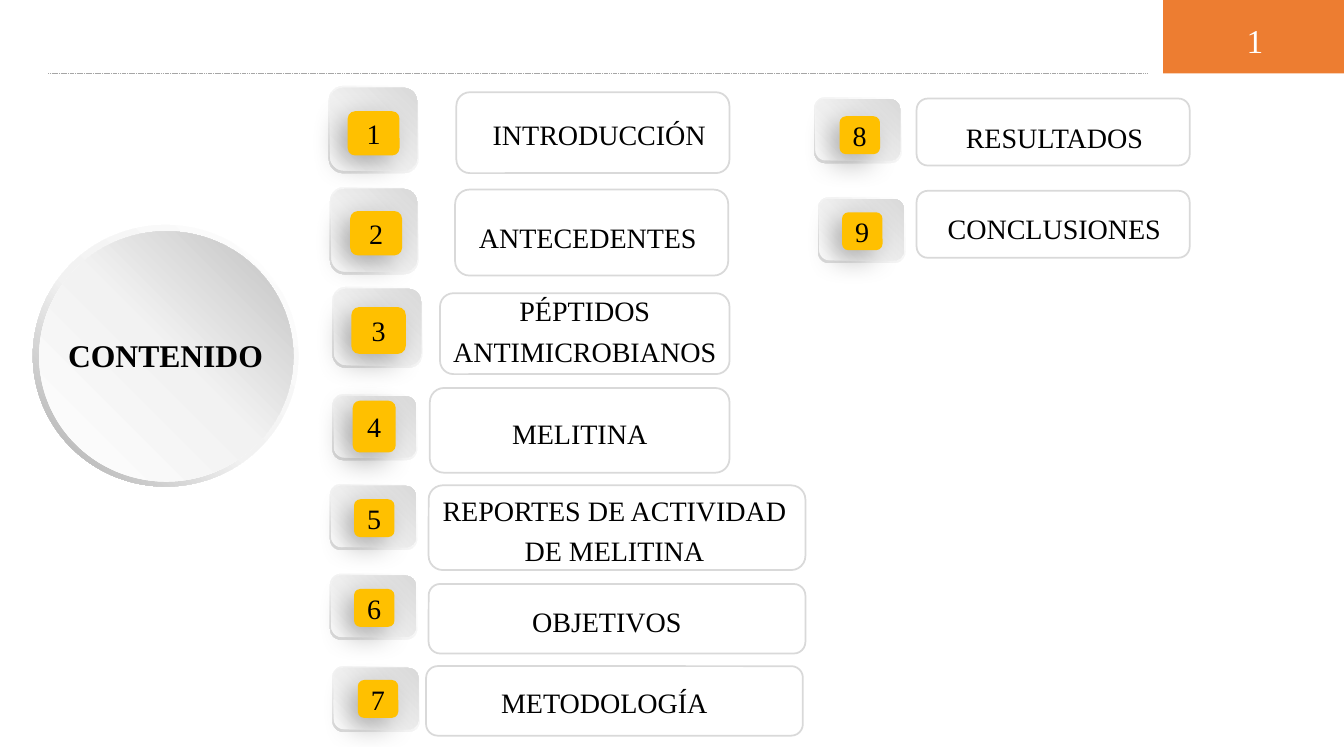
import lxml.etree
import pptx
import pptx.dml.color
import pptx.enum.dml
import pptx.enum.shapes
import pptx.enum.text
import pptx.oxml.ns
import pptx.util

COLUMNS, ROWS = 106.3, 59.1
CELL = pptx.util.Inches(0.1)
FONT = "Times New Roman"
COLORS = {
    "white": "FFFFFF", "black": "000000", "orange": "ED7D31", "amber": "FFC000",
    "border": "D9D9D9", "rule": "A6A6A6", "light": "F2F2F2", "pale": "F0F0F0",
    "silver": "BFBFBF",
}
TILE_BACK = ([(0, "white"), (62, "light"), (100, "border")], 135)
TILE_FRONT = ([(0, "white"), (42, "pale"), (100, "border")], 315)
RING = ([(0, "white"), (55, "light"), (100, "rule")], 135)
DISC = ([(0, "white"), (51, "light"), (100, "silver")], 315)
SHAPES = pptx.enum.shapes.MSO_SHAPE

# number, label lines, frame, label box, tile, chip: left, top, columns, rows
CONTENTS = [
    ("1", ["INTRODUCCIÓN"], (36.1, 7.3, 21.6, 6.4), (25.5, 8.3, 43.8, 4),
     (26, 6.8, 7.1, 6.9), (27.5, 8.8, 4.1, 3.5)),
    ("2", ["ANTECEDENTES"], (36, 15, 21.6, 6.8), (31.6, 16.4, 29.8, 4),
     (26.1, 14.8, 7, 6.9), (27.7, 16.7, 4.1, 3.5)),
    ("3", ["PÉPTIDOS", "ANTIMICROBIANOS"], (34.8, 23.2, 22.9, 6.4), (34.7, 22.2, 23.1, 7.2),
     (26.3, 22.7, 7.1, 6.4), (27.8, 24.3, 4.3, 3.7)),
    ("4", ["MELITINA"], (34, 30.7, 23.7, 6.7), (39.4, 31.9, 12.9, 4),
     (26.3, 31.2, 6.7, 5.2), (27.9, 31.7, 3.4, 4.1)),
    ("5", ["REPORTES DE ACTIVIDAD", "DE MELITINA"], (33.9, 38.4, 29.8, 6.7), (23.2, 38, 50.8, 7.2),
     (26.1, 38.3, 6.9, 5.2), (28, 39.5, 3.2, 3)),
    ("6", ["OBJETIVOS"], (33.9, 46.2, 29.8, 5.5), (33.1, 46.8, 29.8, 4),
     (26.1, 45.4, 6.9, 5.2), (28, 46.6, 3.2, 3)),
    ("7", ["METODOLOGÍA"], (33.7, 52.7, 29.8, 5.5), (32.9, 53.2, 29.8, 4),
     (26.3, 52.7, 6.9, 5.2), (28.3, 53.8, 3.2, 3)),
    ("8", ["RESULTADOS"], (72.5, 7.8, 21.6, 5.3), (68.5, 8.5, 29.8, 4),
     (64.4, 7.7, 6.9, 5.2), (66.4, 9.2, 3.2, 3)),
    ("9", ["CONCLUSIONES"], (72.5, 15.1, 21.6, 5.3), (73.6, 15.7, 19.6, 4),
     (64.7, 15.6, 6.9, 5.2), (66.6, 16.8, 3.2, 3)),
]


def cells(*counts):
    return [int(count * CELL) for count in counts]


def rgb(name):
    return pptx.dml.color.RGBColor.from_string(COLORS[name])


def add_element(parent, tag, **attributes):
    element = lxml.etree.SubElement(parent, pptx.oxml.ns.qn(tag))
    for name, value in attributes.items():
        element.set(name, str(value))
    return element


def write_text(frame, lines, size=16, color="black", bold=False, spacing=1.0):
    for index, line in enumerate(lines):
        paragraph = frame.paragraphs[0] if index == 0 else frame.add_paragraph()
        paragraph.text = line
        paragraph.alignment = pptx.enum.text.PP_ALIGN.CENTER
        paragraph.line_spacing = spacing
        paragraph.font.name = FONT
        paragraph.font.size = pptx.util.Pt(size)
        paragraph.font.bold = bold
        paragraph.font.color.rgb = rgb(color)


def add_text_box(shapes, bounds, lines, wrap=True, **text_format):
    frame = shapes.add_textbox(*cells(*bounds)).text_frame
    frame.word_wrap = wrap
    frame.auto_size = pptx.enum.text.MSO_AUTO_SIZE.SHAPE_TO_FIT_TEXT
    write_text(frame, lines, **text_format)


def add_solid(shapes, kind, bounds, fill, border=None):
    shape = shapes.add_shape(kind, *cells(*bounds))
    shape.shadow.inherit = False
    shape.fill.solid()
    shape.fill.fore_color.rgb = rgb(fill)
    if border:
        shape.line.color.rgb = rgb(border)
        shape.line.width = pptx.util.Pt(1)
    else:
        shape.line.fill.background()
    return shape


def add_gradient(shapes, kind, bounds, gradient):
    stops, angle = gradient
    shape = add_solid(shapes, kind, bounds, "white")
    shape.fill.gradient()
    shape.fill.gradient_angle = 360 - angle
    stop_list = shape.element.spPr.find(".//" + pptx.oxml.ns.qn("a:gsLst"))
    stop_list.clear()
    for position, color in stops:
        stop = add_element(stop_list, "a:gs", pos=position * 1000)
        add_element(stop, "a:srgbClr", val=COLORS[color])
    return shape


def add_tile(shapes, bounds):
    left, top, width, height = bounds
    group = shapes.add_group_shape()
    add_gradient(group.shapes, SHAPES.ROUNDED_RECTANGLE, bounds, TILE_BACK)
    front = (left + 0.1, top + 0.15, width - 0.2, height - 0.35)
    add_gradient(group.shapes, SHAPES.ROUNDED_RECTANGLE, front, TILE_FRONT)


def add_chip(shapes, bounds, number):
    chip = add_solid(shapes, SHAPES.ROUNDED_RECTANGLE, bounds, "amber")
    effects = chip.element.spPr.find(pptx.oxml.ns.qn("a:effectLst"))
    shadow = add_element(effects, "a:outerShdw", blurRad=pptx.util.Pt(16),
                         dist=pptx.util.Pt(7), dir=135 * 60000, algn="tr", rotWithShape=0)
    shade = add_element(shadow, "a:srgbClr", val=COLORS["black"])
    add_element(shade, "a:alpha", val=30000)
    frame = chip.text_frame
    frame.margin_left = frame.margin_right = 0
    frame.vertical_anchor = pptx.enum.text.MSO_ANCHOR.MIDDLE
    write_text(frame, [number])


def add_header(shapes):
    rule = shapes.add_connector(pptx.enum.shapes.MSO_CONNECTOR.STRAIGHT,
                                *cells(3.8, 5.8, 90.8, 5.8))
    rule.line.color.rgb = rgb("rule")
    rule.line.width = pptx.util.Pt(0.25)
    rule.line.dash_style = pptx.enum.dml.MSO_LINE.SQUARE_DOT
    add_element(rule.element.spPr, "a:effectLst")
    add_solid(shapes, SHAPES.RECTANGLE, (92, 0, 14.3, 5.8), "orange")
    add_text_box(shapes, (96.5, 1.1, 5.5, 4.2), ["1"], size=19, color="white")


def add_title_disc(shapes):
    group = shapes.add_group_shape()
    ring = add_gradient(group.shapes, SHAPES.DONUT, (2.6, 17.8, 21, 20.7), RING)
    ring.adjustments[0] = 0.05
    add_gradient(group.shapes, SHAPES.OVAL, (3.1, 18.3, 20.1, 19.8), DISC)
    add_text_box(group.shapes, (4.3, 26.1, 17.6, 4), ["CONTENIDO"],
                 wrap=False, size=18, bold=True)


def main():
    presentation = pptx.Presentation()
    presentation.slide_width, presentation.slide_height = cells(COLUMNS, ROWS)
    slide = presentation.slides.add_slide(presentation.slide_layouts[6])
    shapes = slide.shapes
    add_header(shapes)
    add_title_disc(shapes)
    for number, lines, frame, label, tile, chip in CONTENTS:
        add_solid(shapes, SHAPES.ROUNDED_RECTANGLE, frame, "white", border="border")
        add_text_box(shapes, label, lines, spacing=1.2)
        add_tile(shapes, tile)
        add_chip(shapes, chip, number)
    presentation.save("out.pptx")


if __name__ == "__main__":
    main()
